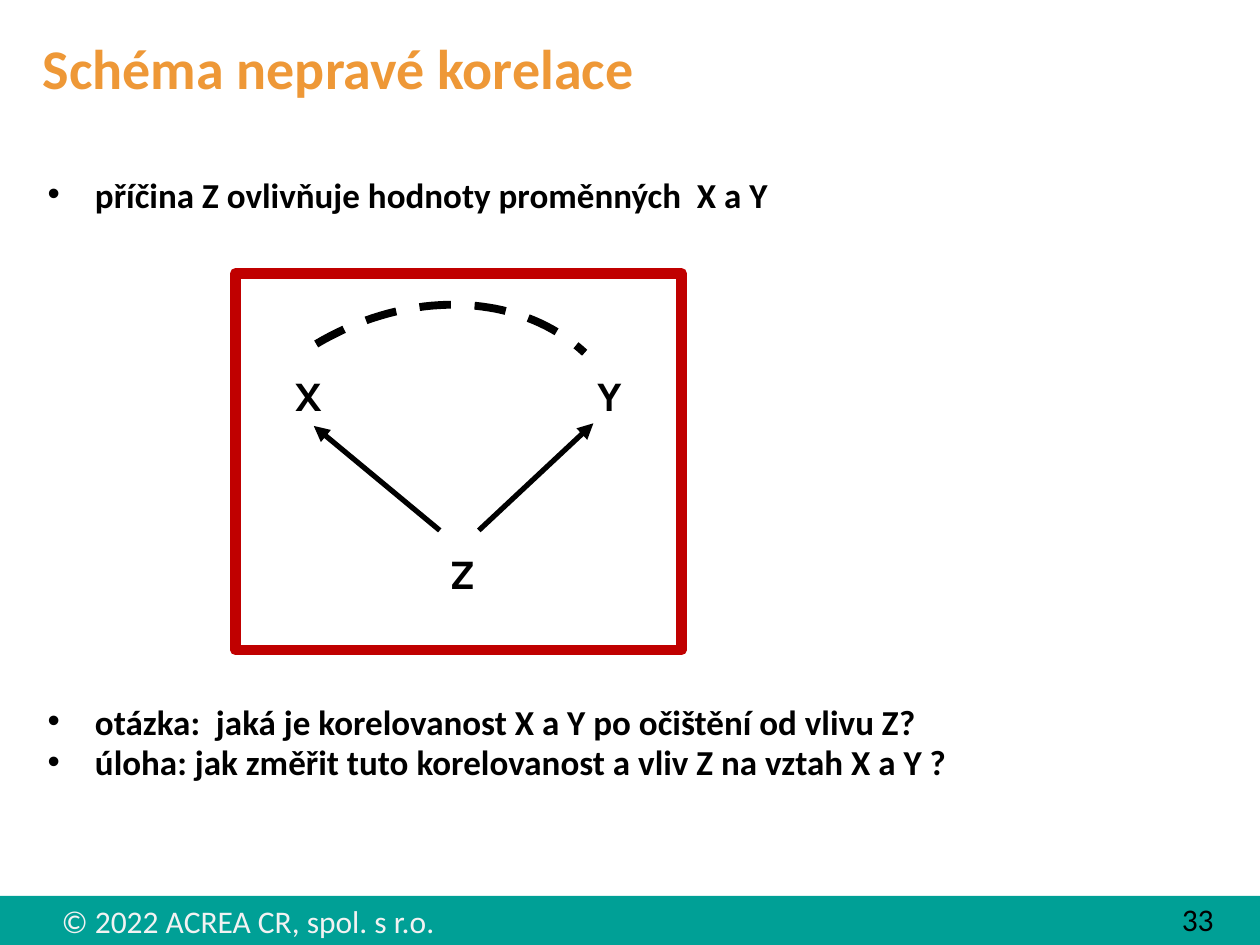
"""Build the slide that shows the scheme of a spurious correlation."""
from dataclasses import dataclass

from lxml import etree
from pptx import Presentation
from pptx.dml.color import RGBColor
from pptx.enum.dml import MSO_LINE
from pptx.enum.shapes import MSO_CONNECTOR, MSO_SHAPE
from pptx.enum.text import MSO_ANCHOR, PP_ALIGN
from pptx.oxml.ns import qn
from pptx.util import Pt

RECTANGLE = MSO_SHAPE.RECTANGLE
STRAIGHT = MSO_CONNECTOR.STRAIGHT
DASH = MSO_LINE.DASH
MIDDLE = MSO_ANCHOR.MIDDLE
LEFT = PP_ALIGN.LEFT

COLORS = {
    "footer": "00A096",
    "footer_text": "F2F2F2",
    "title": "EE9837",
    "text": "000000",
    "frame": "C00000",
}
TITLE = "Schéma nepravé korelace"
BODY_FONT = "Calibri"
LABEL_FONT = "Karla"
CURVE = ((180.7, 196.6), (234, 164.9), (296.6, 167), (334.1, 201.6))
CURVE_STEPS = 40


@dataclass
class Box:
    """Position and size in points."""
    left: float
    top: float
    width: float
    height: float

    def emu(self) -> tuple:
        """Return the four lengths for python-pptx."""
        return Pt(self.left), Pt(self.top), Pt(self.width), Pt(self.height)


@dataclass
class Label:
    """A short text with its look."""
    text: str
    box: Box
    size: float = 24
    font: str = LABEL_FONT
    color: str = "text"
    bold: bool = True


@dataclass
class Arrow:
    """Start and end of an arrow in points."""
    start: tuple
    end: tuple


@dataclass
class Bullet:
    """A bulleted line and the space before it in points."""
    text: str
    before: float


FOOTER_BOX = Box(0, 512, 720, 28)
FRAME_BOX = Box(134.6, 156.2, 254.9, 215.3)
TITLE_BOX = Box(17.3, 17.3, 595.4, 42.5)
BODY_BOX = Box(20.2, 100, 560, 364)
LABELS = [
    Label("© 2022 ACREA CR, spol. s r.o.", Box(28.1, 512, 266.4, 28.8), 18,
          BODY_FONT, "footer_text", False),
    Label("33", Box(668.2, 510.5, 51.8, 28.1), 18, BODY_FONT, bold=False),
    Label("X", Box(161.3, 207.4, 25.9, 33.1)),
    Label("Y", Box(334.1, 207.4, 25.9, 33.1)),
    Label("Z", Box(249.8, 309.6, 25.9, 33.1)),
]
ARROWS = [
    Arrow((251.3, 303.1), (179.3, 243.4)),
    Arrow((273.6, 303.1), (339.1, 241.9)),
]
BULLETS = [
    Bullet("příčina Z ovlivňuje hodnoty proměnných  X a Y", 0),
    Bullet("otázka:  jaká je korelovanost X a Y po očištění od vlivu Z?", 282),
    Bullet("úloha: jak změřit tuto korelovanost a vliv Z na vztah X a Y ?", 4),
]


def rgb(name: str) -> RGBColor:
    """Look up a named colour."""
    return RGBColor.from_string(COLORS[name])


def format_runs(p, font: str, size: float, color: str, bold: bool) -> None:
    """Format every run of a paragraph."""
    for r in p.runs:
        r.font.name = font
        r.font.size = Pt(size)
        r.font.bold = bold
        r.font.color.rgb = rgb(color)


def add_label(s, label: Label) -> None:
    """Draw a one-line text box."""
    tf = s.shapes.add_textbox(*label.box.emu()).text_frame
    tf.word_wrap = True
    tf.text = label.text
    format_runs(tf.paragraphs[0], label.font, label.size, label.color, label.bold)


def add_rectangle(s, box: Box):
    """Draw a rectangle without a shadow."""
    sp = s.shapes.add_shape(RECTANGLE, *box.emu())
    sp.shadow.inherit = False
    return sp


def add_arrow(s, arrow: Arrow) -> None:
    """Draw a straight arrow."""
    c = s.shapes.add_connector(STRAIGHT, *map(Pt, arrow.start + arrow.end))
    c.line.color.rgb = rgb("text")
    c.line.width = Pt(3)
    etree.SubElement(c.line._get_or_add_ln(), qn("a:tailEnd"), type="triangle")
    etree.SubElement(c._element.spPr, qn("a:effectLst"))


def curve_point(t: float) -> tuple:
    """Return a point of the cubic curve in EMU."""
    weights = ((1 - t) ** 3, 3 * t * (1 - t) ** 2, 3 * t * t * (1 - t), t ** 3)
    return tuple(Pt(sum(w * v for w, v in zip(weights, axis))) for axis in zip(*CURVE))


def add_curve(s) -> None:
    """Draw the dashed curve between X and Y."""
    start, *rest = [curve_point(i / CURVE_STEPS) for i in range(CURVE_STEPS + 1)]
    builder = s.shapes.build_freeform(*start)
    builder.add_line_segments(rest, close=False)
    sp = builder.convert_to_shape()
    sp.shadow.inherit = False
    sp.fill.background()
    sp.line.color.rgb = rgb("text")
    sp.line.width = Pt(4.5)
    sp.line.dash_style = DASH


def add_title(s) -> None:
    """Fill and place the title placeholder."""
    sp = s.shapes.title
    sp.left, sp.top, sp.width, sp.height = TITLE_BOX.emu()
    tf = sp.text_frame
    tf.text = TITLE
    tf.vertical_anchor = MIDDLE
    tf.margin_right = 0
    p = tf.paragraphs[0]
    p.alignment = LEFT
    format_runs(p, BODY_FONT, 32, "title", True)


def add_bullets(s) -> None:
    """Draw the bulleted text around the scheme."""
    tf = s.shapes.add_textbox(*BODY_BOX.emu()).text_frame
    tf.word_wrap = True
    for i, bullet in enumerate(BULLETS):
        p = tf.add_paragraph() if i else tf.paragraphs[0]
        p.text = bullet.text
        p.line_spacing = 0.8
        p.space_before = Pt(bullet.before)
        p_pr = p._p.get_or_add_pPr()
        p_pr.set("marL", str(Pt(27)))
        p_pr.set("indent", str(-Pt(27)))
        etree.SubElement(p_pr, qn("a:buFont"), typeface="Arial")
        etree.SubElement(p_pr, qn("a:buChar"), char="•")
        format_runs(p, BODY_FONT, 20, "text", True)


def main() -> None:
    """Create and save the presentation."""
    prs = Presentation()
    prs.slide_width, prs.slide_height = Pt(720), Pt(540)
    s = prs.slides.add_slide(prs.slide_layouts[5])
    footer = add_rectangle(s, FOOTER_BOX)
    footer.fill.solid()
    footer.fill.fore_color.rgb = rgb("footer")
    footer.line.fill.background()
    add_title(s)
    add_bullets(s)
    for arrow in ARROWS:
        add_arrow(s, arrow)
    frame = add_rectangle(s, FRAME_BOX)
    frame.fill.background()
    frame.line.color.rgb = rgb("frame")
    frame.line.width = Pt(6)
    for label in LABELS:
        add_label(s, label)
    add_curve(s)
    prs.save("out.pptx")


if __name__ == "__main__":
    main()
